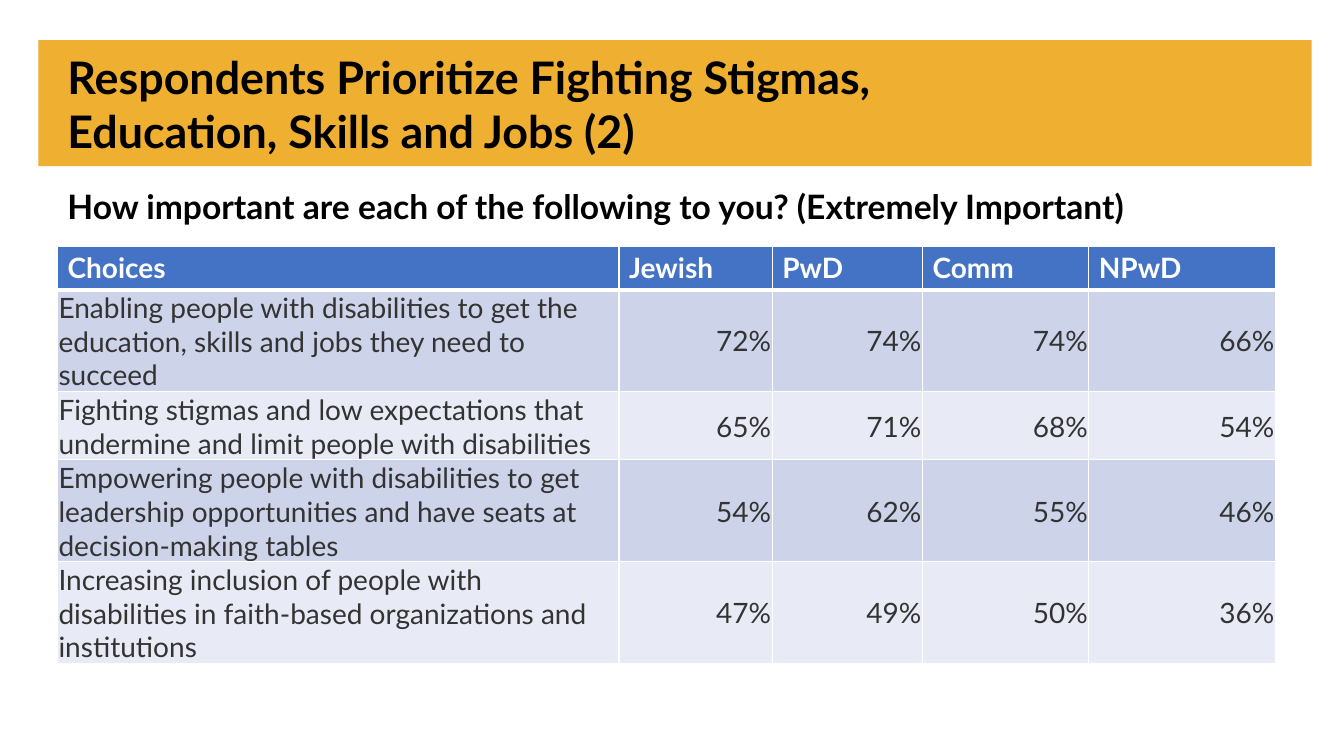
import pptx
import pptx.dml.color
import pptx.enum.shapes
import pptx.enum.text
import pptx.oxml
import pptx.oxml.ns
import pptx.util

RGBColor = pptx.dml.color.RGBColor
GOLD = RGBColor(0xEF, 0xAF, 0x30)
BLACK = RGBColor(0x00, 0x00, 0x00)
WHITE = RGBColor(0xFF, 0xFF, 0xFF)
BLUE = RGBColor(0x44, 0x72, 0xC4)
GREY = RGBColor(0x33, 0x33, 0x33)
BANDS = (RGBColor(0xCD, 0xD4, 0xEA), RGBColor(0xE8, 0xEB, 0xF5))

MIDDLE = pptx.enum.text.MSO_ANCHOR.MIDDLE
TOP = pptx.enum.text.MSO_ANCHOR.TOP
LEFT = pptx.enum.text.PP_ALIGN.LEFT
RIGHT = pptx.enum.text.PP_ALIGN.RIGHT

HEADER = ("Choices", "Jewish", "PwD", "Comm", "NPwD")
COLUMN_WIDTHS = (41.78, 11.4, 11.18, 12.38, 13.88)
# Choice, lines it takes, then one share per group
CHOICES = (
    ("Enabling people with disabilities to get the education, skills "
     "and jobs they need to succeed", 3, (72, 74, 74, 66)),
    ("Fighting stigmas and low expectations that undermine and limit "
     "people with disabilities", 2, (65, 71, 68, 54)),
    ("Empowering people with disabilities to get leadership opportunities "
     "and have seats at decision-making tables", 3, (54, 62, 55, 46)),
    ("Increasing inclusion of people with disabilities in faith-based "
     "organizations and institutions", 2, (47, 49, 50, 36)),
)
HEADER_HEIGHT, LINE_HEIGHT, ROW_PADDING = 5.73, 4.45, 0.13


class SlideBuilder:
    """Draws on one slide; lengths are percentages of the slide's size."""

    font = "Lato"

    def __init__(self, prs):
        self.prs = prs
        self.s = prs.slides.add_slide(prs.slide_layouts[6])

    def x(self, share):
        return round(self.prs.slide_width * share / 100)

    def y(self, share):
        return round(self.prs.slide_height * share / 100)

    def box(self, left, top, width, height):
        return self.x(left), self.y(top), self.x(width), self.y(height)

    def set_text(self, tf, text, size, color, bold=False, align=LEFT):
        p = tf.paragraphs[0]
        p.text = text
        p.alignment = align
        p.font.name = self.font
        p.font.size = pptx.util.Pt(size)
        p.font.bold = bold
        p.font.color.rgb = color

    def band(self, place, color):
        sp = self.s.shapes.add_shape(
            pptx.enum.shapes.MSO_SHAPE.RECTANGLE, *self.box(*place))
        sp.shadow.inherit = False
        sp.fill.solid()
        sp.fill.fore_color.rgb = color
        sp.line.fill.background()

    def heading(self, place, text, size, anchor):
        tf = self.s.shapes.add_textbox(*self.box(*place)).text_frame
        tf.word_wrap = True
        tf.vertical_anchor = anchor
        self.set_text(tf, text, size, BLACK, bold=True)

    def table(self, left, top, widths, heights):
        place = self.box(left, top, sum(widths), sum(heights))
        table = self.s.shapes.add_table(
            len(heights), len(widths), *place).table
        for column, width in zip(table.columns, widths):
            column.width = self.x(width)
        for row, height in zip(table.rows, heights):
            row.height = self.y(height)
        return table

    def cell(self, cell, text, fill, color, bold=False, align=LEFT,
             margins=(0.01, 0.01, 0.01, 0), top_line=1, bottom_line=1):
        lines = {"lnL": 1, "lnR": 1, "lnT": top_line, "lnB": bottom_line}
        for tag, points in lines.items():
            cell._tc.get_or_add_tcPr().append(pptx.oxml.parse_xml(
                f'<a:{tag} {pptx.oxml.ns.nsdecls("a")} '
                f'w="{pptx.util.Pt(points)}"><a:solidFill>'
                f'<a:srgbClr val="{WHITE}"/></a:solidFill></a:{tag}>'))
        cell.fill.solid()
        cell.fill.fore_color.rgb = fill
        cell.vertical_anchor = MIDDLE
        (cell.margin_left, cell.margin_top, cell.margin_right,
         cell.margin_bottom) = map(pptx.util.Inches, margins)
        self.set_text(cell.text_frame, text, 20, color, bold, align)


def main():
    prs = pptx.Presentation()
    prs.slide_width = pptx.util.Inches(13.33)
    prs.slide_height = pptx.util.Inches(7.5)
    slide = SlideBuilder(prs)

    # Title band and question
    slide.band((2.85, 5.33, 94.75, 16.67), GOLD)
    slide.heading(
        (4.28, 5.33, 93.32, 16.67),
        "Respondents Prioritize Fighting Stigmas,\v"
        "Education, Skills and Jobs (2)", 32, MIDDLE)
    slide.heading(
        (4.28, 23.87, 81.32, 6.67),
        "How important are each of the following to you? "
        "(Extremely Important)", 24, TOP)

    # Table of choices by group
    heights = [HEADER_HEIGHT] + [
        LINE_HEIGHT * lines + ROW_PADDING for _, lines, _ in CHOICES]
    table = slide.table(4.28, 32.53, COLUMN_WIDTHS, heights)
    for col, name in enumerate(HEADER):
        slide.cell(table.cell(0, col), name, BLUE, WHITE, bold=True,
                   margins=(0.1, 0.05, 0.1, 0.05), bottom_line=3)
    for row, (choice, _, shares) in enumerate(CHOICES, start=1):
        fill = BANDS[(row - 1) % 2]
        top_line = 3 if row == 1 else 1
        slide.cell(table.cell(row, 0), choice, fill, GREY, top_line=top_line)
        for col, share in enumerate(shares, start=1):
            slide.cell(table.cell(row, col), f"{share}%", fill, GREY,
                       align=RIGHT, top_line=top_line)

    prs.save("out.pptx")


if __name__ == "__main__":
    main()
